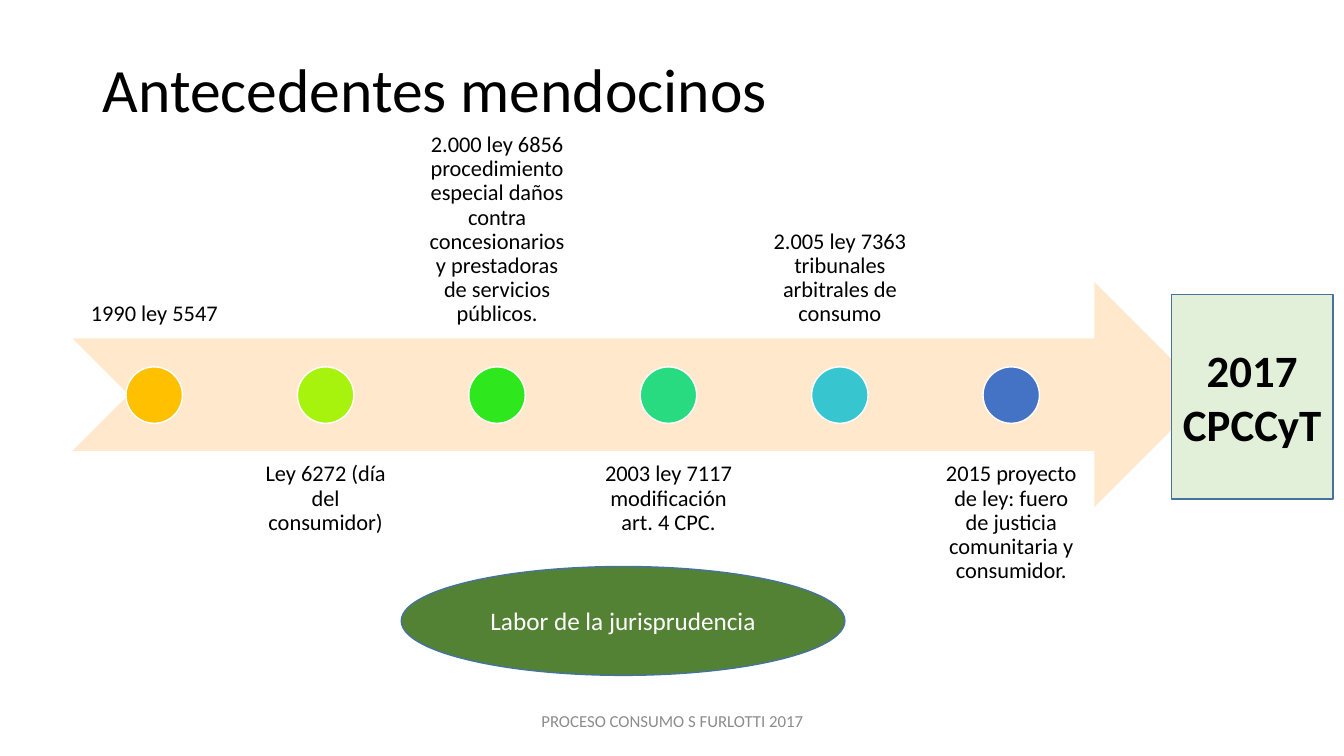
from dataclasses import dataclass

from pptx import Presentation
from pptx.dml.color import RGBColor
from pptx.enum.shapes import MSO_SHAPE
from pptx.enum.text import MSO_ANCHOR, PP_ALIGN
from pptx.shapes.autoshape import Shape
from pptx.slide import Slide
from pptx.util import Inches, Pt

BLACK = RGBColor(0x00, 0x00, 0x00)
WHITE = RGBColor(0xFF, 0xFF, 0xFF)
GRAY = RGBColor(0x8C, 0x8C, 0x8C)
PEACH = RGBColor(0xFF, 0xE8, 0xCC)
PALE_GREEN = RGBColor(0xE2, 0xF0, 0xD9)
DARK_GREEN = RGBColor(0x54, 0x82, 0x35)
BORDER_BLUE = RGBColor(0x43, 0x73, 0x9E)
AMBER = RGBColor(0xFF, 0xC0, 0x00)
LIME = RGBColor(0xA7, 0xF3, 0x0E)
GREEN = RGBColor(0x2E, 0xE7, 0x1C)
MINT = RGBColor(0x29, 0xDB, 0x80)
CYAN = RGBColor(0x37, 0xC6, 0xCF)
BLUE = RGBColor(0x44, 0x72, 0xC4)

ELLIPSE = MSO_SHAPE.OVAL
RECTANGLE = MSO_SHAPE.RECTANGLE
ARROW = MSO_SHAPE.NOTCHED_RIGHT_ARROW
TOP = MSO_ANCHOR.TOP
MIDDLE = MSO_ANCHOR.MIDDLE
BOTTOM = MSO_ANCHOR.BOTTOM
LEFT = PP_ALIGN.LEFT
CENTER = PP_ALIGN.CENTER

FONT = "Calibri"
TIMELINE_LEFT = 0.72
STEP = 1.7
LABEL_WIDTH = 1.62
LABEL_HEIGHT = 2.23
LABEL_ABOVE_TOP = 1.13
LABEL_BELOW_TOP = 4.47
DOT_SIZE = 0.56
DOT_TOP = 3.64


@dataclass(frozen=True)
class Box:
    left: float
    top: float
    width: float
    height: float

    def lengths(self) -> tuple[int, int, int, int]:
        return Inches(self.left), Inches(self.top), Inches(self.width), Inches(self.height)


@dataclass(frozen=True)
class Milestone:
    text: str
    color: RGBColor


MILESTONES = [
    Milestone("1990 ley 5547", AMBER),
    Milestone("Ley 6272 (día del consumidor)", LIME),
    Milestone("2.000 ley 6856 procedimiento especial daños contra "
              "concesionarios y prestadoras de servicios públicos.", GREEN),
    Milestone("2003 ley 7117 modificación art. 4 CPC.", MINT),
    Milestone("2.005 ley 7363 tribunales arbitrales de consumo", CYAN),
    Milestone("2015 proyecto de ley: fuero de justicia comunitaria y consumidor.", BLUE),
]


def write_text(shape: Shape, text: str, *, size: float, color: RGBColor = BLACK,
               bold: bool = False, align: PP_ALIGN = CENTER, anchor: MSO_ANCHOR = MIDDLE,
               margin: float = 0.1, spacing: float = 1.0) -> None:
    frame = shape.text_frame
    frame.word_wrap = True
    frame.vertical_anchor = anchor
    frame.margin_left = frame.margin_right = Inches(margin)
    frame.margin_top = frame.margin_bottom = Inches(margin)
    frame.text = text
    for paragraph in frame.paragraphs:
        paragraph.alignment = align
        paragraph.line_spacing = spacing
        paragraph.font.name = FONT
        paragraph.font.size = Pt(size)
        paragraph.font.bold = bold
        paragraph.font.color.rgb = color


def add_text_box(slide: Slide, box: Box) -> Shape:
    return slide.shapes.add_textbox(*box.lengths())


def add_figure(slide: Slide, kind: MSO_SHAPE, box: Box, fill: RGBColor,
               line: RGBColor | None = None) -> Shape:
    shape = slide.shapes.add_shape(kind, *box.lengths())
    shape.shadow.inherit = False
    shape.fill.solid()
    shape.fill.fore_color.rgb = fill
    if line is None:
        shape.line.fill.background()
    else:
        shape.line.color.rgb = line
        shape.line.width = Pt(1)
    return shape


def add_milestone(slide: Slide, index: int, milestone: Milestone) -> None:
    above = index % 2 == 0
    left = TIMELINE_LEFT + index * STEP
    label_top = LABEL_ABOVE_TOP if above else LABEL_BELOW_TOP
    label = add_text_box(slide, Box(left, label_top, LABEL_WIDTH, LABEL_HEIGHT))
    write_text(label, milestone.text, size=16, anchor=BOTTOM if above else TOP,
               margin=0.12, spacing=0.9)
    dot_left = left + (LABEL_WIDTH - DOT_SIZE) / 2
    add_figure(slide, ELLIPSE, Box(dot_left, DOT_TOP, DOT_SIZE, DOT_SIZE),
               milestone.color, WHITE)


def main() -> None:
    presentation = Presentation()
    presentation.slide_width = Inches(13.33)
    presentation.slide_height = Inches(7.5)
    slide = presentation.slides.add_slide(presentation.slide_layouts[6])

    title = add_text_box(slide, Box(0.92, 0.19, 11.5, 1.45))
    write_text(title, "Antecedentes mendocinos", size=44, align=LEFT, spacing=0.9)

    add_figure(slide, ARROW, Box(TIMELINE_LEFT, 2.8, 11.25, 2.23), PEACH)
    for index, milestone in enumerate(MILESTONES):
        add_milestone(slide, index, milestone)

    footer = add_text_box(slide, Box(4.42, 6.95, 4.5, 0.4))
    write_text(footer, "PROCESO CONSUMO S FURLOTTI 2017", size=12, color=GRAY, margin=0.05)

    code = add_figure(slide, RECTANGLE, Box(11.62, 2.92, 1.6, 2.03), PALE_GREEN, BORDER_BLUE)
    write_text(code, "2017\nCPCCyT", size=32, bold=True, margin=0.05)

    case_law = add_figure(slide, ELLIPSE, Box(3.98, 5.62, 4.4, 1.08), DARK_GREEN, BORDER_BLUE)
    write_text(case_law, "Labor de la jurisprudencia", size=18, color=WHITE)

    presentation.save("out.pptx")


if __name__ == "__main__":
    main()
